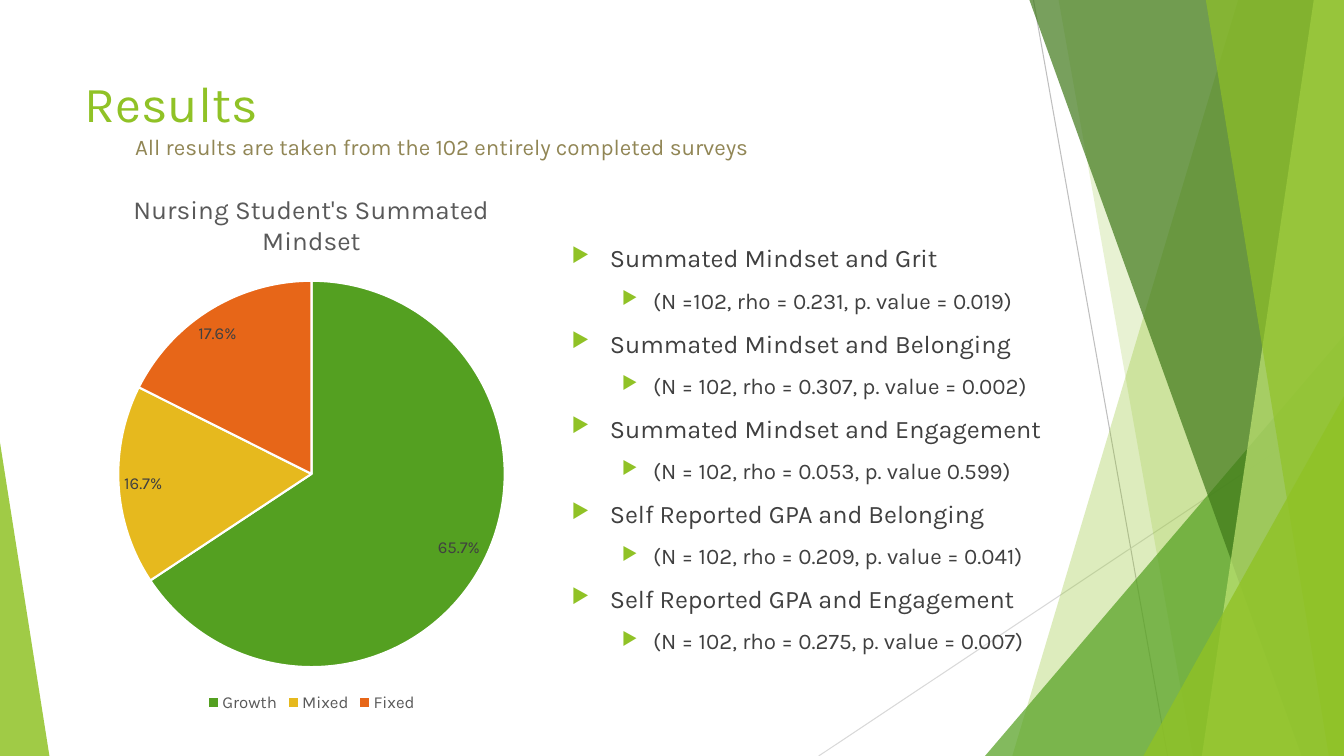
from lxml import etree
from pptx import Presentation
from pptx.chart.data import CategoryChartData
from pptx.dml.color import RGBColor
from pptx.enum.chart import XL_CHART_TYPE, XL_LABEL_POSITION, XL_LEGEND_POSITION
from pptx.enum.shapes import MSO_CONNECTOR, MSO_SHAPE
from pptx.enum.text import MSO_ANCHOR, MSO_AUTO_SIZE, PP_ALIGN
from pptx.oxml import parse_xml
from pptx.oxml.ns import nsdecls, qn
from pptx.util import Inches, Pt

PIE = XL_CHART_TYPE.PIE
BEST_FIT = XL_LABEL_POSITION.BEST_FIT
BOTTOM = XL_LEGEND_POSITION.BOTTOM
STRAIGHT = MSO_CONNECTOR.STRAIGHT
TRIANGLE = MSO_SHAPE.ISOSCELES_TRIANGLE
TOP = MSO_ANCHOR.TOP
NO_FIT = MSO_AUTO_SIZE.NONE
LEFT = PP_ALIGN.LEFT

WHITE = RGBColor(0xFF, 0xFF, 0xFF)
LIME = RGBColor(0x90, 0xC2, 0x26)
GREEN = RGBColor(0x54, 0xA0, 0x21)
FOREST = RGBColor(0x3F, 0x78, 0x19)
PALE_LIME = RGBColor(0xC0, 0xE4, 0x74)
YELLOW = RGBColor(0xE6, 0xB9, 0x1E)
ORANGE = RGBColor(0xE7, 0x66, 0x18)
OLIVE = RGBColor(0x91, 0x86, 0x55)
TEXT = RGBColor(0x40, 0x40, 0x40)
CHART_TEXT = RGBColor(0x59, 0x59, 0x59)
GRAY = RGBColor(0xBF, 0xBF, 0xBF)
LIGHT_GRAY = RGBColor(0xD9, 0xD9, 0xD9)

WIDTH, HEIGHT = 13.33, 7.5
CHART_NAME = "Nursing Student's Summated Mindset"
SHARES = [("Growth", 0.657, GREEN), ("Mixed", 0.167, YELLOW), ("Fixed", 0.176, ORANGE)]
FINDINGS = [
    ("Summated Mindset and Grit", "(N =102, rho = 0.231, p. value = 0.019)"),
    ("Summated Mindset and Belonging", "(N = 102, rho = 0.307, p. value = 0.002)"),
    ("Summated Mindset and Engagement", "(N = 102, rho = 0.053, p. value 0.599)"),
    ("Self Reported GPA and Belonging", "(N = 102, rho = 0.209, p. value = 0.041)"),
    ("Self Reported GPA and Engagement", "(N = 102, rho = 0.275, p. value = 0.007)"),
]
LEVELS = [(18, 0.38, 0.38), (16, 0.81, 0.31)]


class Deck:
    font = "Karla"

    def __init__(self, prs):
        self.s = prs.slides.add_slide(prs.slide_layouts[5])

    def style(self, font, size, color):
        font.name = self.font
        font.size = Pt(size)
        font.color.rgb = color

    def paint(self, sp, color, alpha):
        sp.shadow.inherit = False
        sp.fill.solid()
        sp.fill.fore_color.rgb = color
        sp.line.fill.background()
        clr = sp.fill._xPr.find(qn("a:solidFill"))[0]
        etree.SubElement(clr, qn("a:alpha")).set("val", str(alpha * 1000))

    def line(self, x1, y1, x2, y2, color):
        c = self.s.shapes.add_connector(
            STRAIGHT, Inches(x1), Inches(y1), Inches(x2), Inches(y2))
        c.line.color.rgb = color
        c.line.width = Pt(0.75)
        etree.SubElement(c._element.spPr, qn("a:effectLst"))

    def band(self, top_x, bottom_x, color, alpha):
        points = [(WIDTH, 0), (WIDTH, HEIGHT), (bottom_x, HEIGHT)]
        fb = self.s.shapes.build_freeform(Inches(top_x), 0)
        fb.add_line_segments([(Inches(x), Inches(y)) for x, y in points])
        self.paint(fb.convert_to_shape(), color, alpha)

    def triangle(self, x, y, w, apex, color, alpha):
        sp = self.s.shapes.add_shape(
            TRIANGLE, Inches(x), Inches(y), Inches(w), Inches(HEIGHT - y))
        sp.adjustments[0] = apex
        self.paint(sp, color, alpha)

    def place(self, sp, x, y, w, h):
        sp.left, sp.top, sp.width, sp.height = Inches(x), Inches(y), Inches(w), Inches(h)
        tf = sp.text_frame
        tf.word_wrap = True
        tf.auto_size = NO_FIT
        tf.vertical_anchor = TOP
        return tf

    def title(self, text, subtitle):
        tf = self.place(self.s.shapes.title, 0.74, 0.67, 9.4, 1.44)
        tf.text = f"{text}\n{subtitle}"
        for p, size, color, indent in zip(tf.paragraphs, (36, 16), (LIME, OLIVE), (0, 0.5)):
            p.alignment = LEFT
            p._p.get_or_add_pPr().set("marL", str(Inches(indent)))
            self.style(p.runs[0].font, size, color)

    def bullets(self, pairs, x, y, w, h):
        sp = self.s.shapes.add_textbox(0, 0, 0, 0)
        tf = self.place(sp, x, y, w, h)
        tf.text = "\n".join(text for pair in pairs for text in pair)
        for i, p in enumerate(tf.paragraphs):
            p.level = i % 2
            size, margin, hang = LEVELS[p.level]
            p.space_before = Pt(10)
            self.style(p.runs[0].font, size, TEXT)
            pPr = p._p.get_or_add_pPr()
            pPr.set("marL", str(Inches(margin)))
            pPr.set("indent", str(-Inches(hang)))
            clr = etree.SubElement(pPr, qn("a:buClr"))
            etree.SubElement(clr, qn("a:srgbClr")).set("val", str(LIME))
            etree.SubElement(pPr, qn("a:buSzPct")).set("val", "80000")
            etree.SubElement(pPr, qn("a:buChar")).set("char", "▶")

    def pie(self, name, shares, x, y, w, h):
        data = CategoryChartData(number_format="0.0%")
        data.categories = [label for label, _, _ in shares]
        data.add_series(name, [value for _, value, _ in shares])
        chart = self.s.shapes.add_chart(
            PIE, Inches(x), Inches(y), Inches(w), Inches(h), data).chart
        chart.font.name = self.font
        chart.font.size = Pt(10)
        chart.has_title = True
        tf = chart.chart_title.text_frame
        tf.text = name
        self.style(tf.paragraphs[0].runs[0].font, 18.6, CHART_TEXT)
        tf.paragraphs[0].runs[0].font.bold = False
        chart.chart_title.include_in_layout = False
        chart.has_legend = True
        chart.legend.position = BOTTOM
        chart.legend.include_in_layout = False
        self.style(chart.legend.font, 12, CHART_TEXT)
        plot = chart.plots[0]
        plot.vary_by_categories = True
        for i, (_, _, color) in enumerate(shares):
            fmt = plot.series[0].points[i].format
            fmt.fill.solid()
            fmt.fill.fore_color.rgb = color
            fmt.line.color.rgb = WHITE
            fmt.line.width = Pt(1.5)
        labels = plot.series[0].data_labels
        labels.show_value = True
        labels.number_format = "0.0%"
        labels.number_format_is_linked = False
        labels.position = BEST_FIT
        self.style(labels.font, 12, TEXT)
        area = chart._chartSpace.chart.plotArea
        for old in area.findall(qn("c:layout")):
            area.remove(old)
        area.insert(0, parse_xml(
            f'<c:layout {nsdecls("c")}><c:manualLayout><c:layoutTarget val="inner"/>'
            '<c:xMode val="edge"/><c:yMode val="edge"/><c:x val="0.13"/><c:y val="0.2"/>'
            '<c:w val="0.74"/><c:h val="0.71"/></c:manualLayout></c:layout>'))


def main():
    prs = Presentation()
    prs.slide_width, prs.slide_height = Inches(WIDTH), Inches(HEIGHT)
    deck = Deck(prs)
    deck.line(10.25, 0, 11.58, HEIGHT, GRAY)
    deck.line(WIDTH, 4.03, 8.12, HEIGHT, LIGHT_GRAY)
    deck.band(12.28, 10.04, LIME, 30)
    deck.band(10.5, 11.83, LIME, 20)
    deck.triangle(9.77, 3.33, 3.56, 1, GREEN, 72)
    deck.band(10.21, 12.91, FOREST, 70)
    deck.band(13.03, 11.92, PALE_LIME, 70)
    deck.band(11.96, 13.18, LIME, 65)
    deck.triangle(11.34, 3.93, 1.99, 1, LIME, 80)
    deck.triangle(0, 4.39, 0.49, 0, LIME, 85)
    deck.title("Results", "All results are taken from the 102 entirely completed surveys")
    deck.pie(CHART_NAME, SHARES, 0.5, 1.7, 5.18, 5.41)
    deck.bullets(FINDINGS, 5.57, 2.36, 5.18, 4.24)
    prs.save("out.pptx")


if __name__ == "__main__":
    main()
